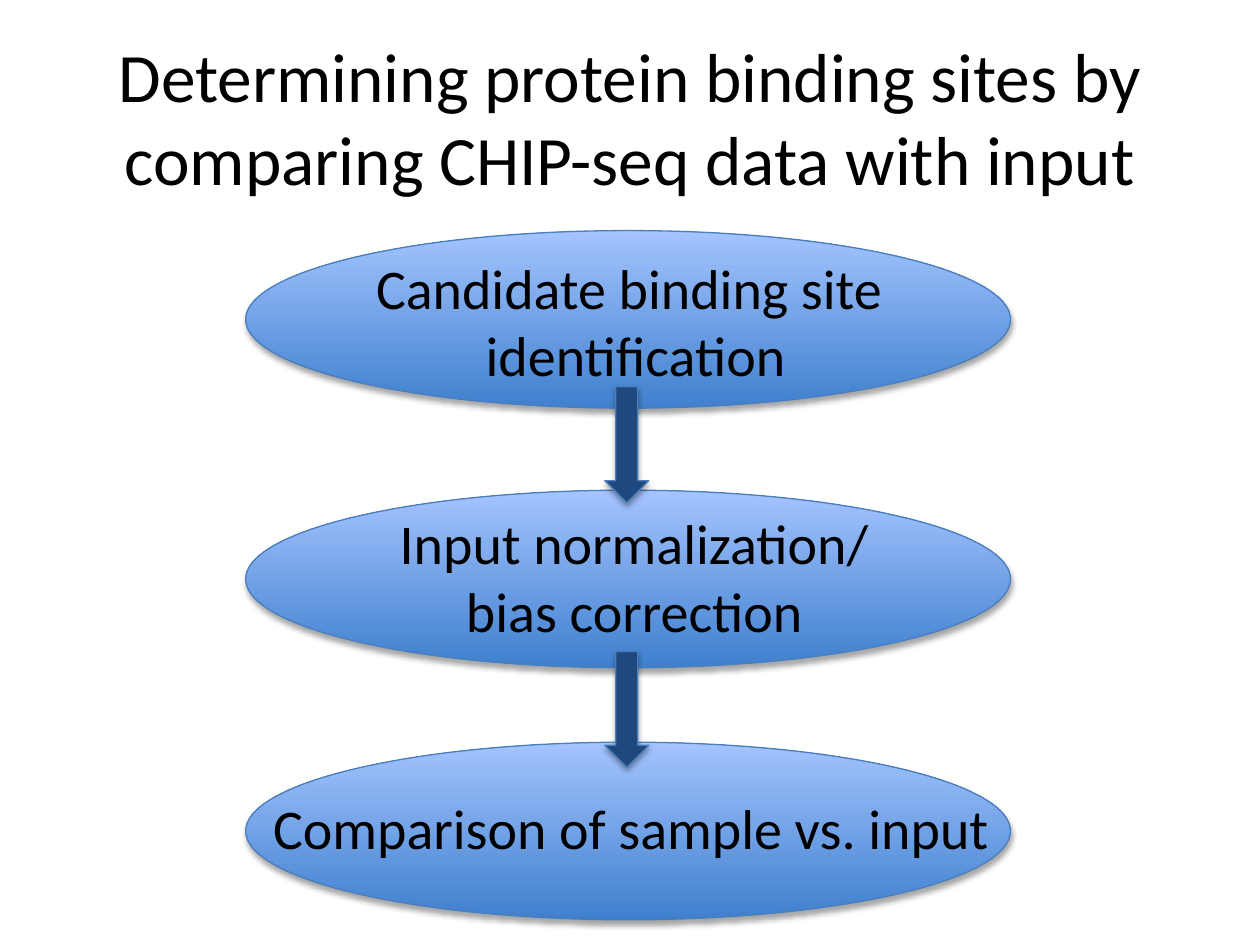
from dataclasses import dataclass

from lxml.etree import SubElement
from pptx import Presentation
from pptx.dml.color import RGBColor
from pptx.enum.shapes import MSO_SHAPE as Shape
from pptx.enum.text import MSO_ANCHOR as Anchor, MSO_AUTO_SIZE as AutoSize, PP_ALIGN as Align
from pptx.oxml.ns import qn
from pptx.util import Inches, Pt

TITLE = "Determining protein binding sites by comparing CHIP-seq data with input"
STEPS = [
    (1.83, "Candidate binding site\n identification", (2.86, 1.96, 4.27, 1.18)),
    (3.89, "Input normalization/\nbias correction", (3.05, 3.99, 3.97, 1.18)),
    (5.89, "Comparison of sample vs. input", (2.04, 6.25, 5.94, 0.64)),
]
ARROW_TOPS = [3.07, 5.17]
OVAL_LEFT, OVAL_WIDTH, OVAL_HEIGHT = 1.95, 6.07, 1.41
ARROW_LEFT, ARROW_WIDTH, ARROW_HEIGHT = 4.8, 0.35, 0.92


@dataclass(frozen=True)
class Theme:
    font: str = "Calibri"
    title_size: float = 39.6
    step_size: float = 32
    text: str = "000000"
    oval_bottom: str = "3F80CE"
    oval_top: str = "A4C4FF"
    outline: str = "4B7EBC"
    arrow: str = "1F497D"
    shadow: str = "000000"


theme = Theme()


def rgb(color):
    return RGBColor.from_string(color)


def add_text(shapes, place, text, size):
    box = shapes.add_textbox(*map(Inches, place))
    frame = box.text_frame
    frame.text = text
    for para in frame.paragraphs:
        para.alignment = Align.CENTER
        for span in para.runs:
            span.font.name = theme.font
            span.font.size = Pt(size)
            span.font.color.rgb = rgb(theme.text)
    return frame


def add_shadowed(shapes, kind, *place):
    shape = shapes.add_shape(kind, *map(Inches, place))
    shape.line.color.rgb = rgb(theme.outline)
    shape.line.width = Pt(0.75)
    shape.shadow.inherit = False
    effects = shape._element.spPr.find(qn("a:effectLst"))
    shadow = SubElement(effects, qn("a:outerShdw"), blurRad=str(Pt(3.15)),
                        dist=str(Pt(1.81)), dir="5400000", rotWithShape="0")
    color = SubElement(shadow, qn("a:srgbClr"), val=theme.shadow)
    SubElement(color, qn("a:alpha"), val="35000")
    return shape


def add_step(page, top, text, text_place):
    group = page.shapes.add_group_shape()
    oval = add_shadowed(group.shapes, Shape.OVAL, OVAL_LEFT, top, OVAL_WIDTH, OVAL_HEIGHT)
    oval.fill.gradient()
    oval.fill.gradient_angle = 90
    for stop, color in zip(oval.fill.gradient_stops, (theme.oval_bottom, theme.oval_top)):
        stop.color.rgb = rgb(color)
    for stop, position in zip(oval.fill.gradient_stops, (0, 1)):
        stop.position = position
    frame = add_text(group.shapes, text_place, text, theme.step_size)
    frame.word_wrap = False
    frame.auto_size = AutoSize.SHAPE_TO_FIT_TEXT


def main():
    deck = Presentation()
    deck.slide_width, deck.slide_height = Inches(10), Inches(7.5)
    page = deck.slides.add_slide(deck.slide_layouts[6])

    title = add_text(page.shapes, (0.5, 0.3, 9, 1.25), TITLE, theme.title_size)
    title.word_wrap = True
    title.vertical_anchor = Anchor.MIDDLE

    for step in STEPS:
        add_step(page, *step)

    for top in ARROW_TOPS:
        arrow = add_shadowed(page.shapes, Shape.DOWN_ARROW,
                             ARROW_LEFT, top, ARROW_WIDTH, ARROW_HEIGHT)
        arrow.fill.solid()
        arrow.fill.fore_color.rgb = rgb(theme.arrow)

    deck.save("out.pptx")


if __name__ == "__main__":
    main()
